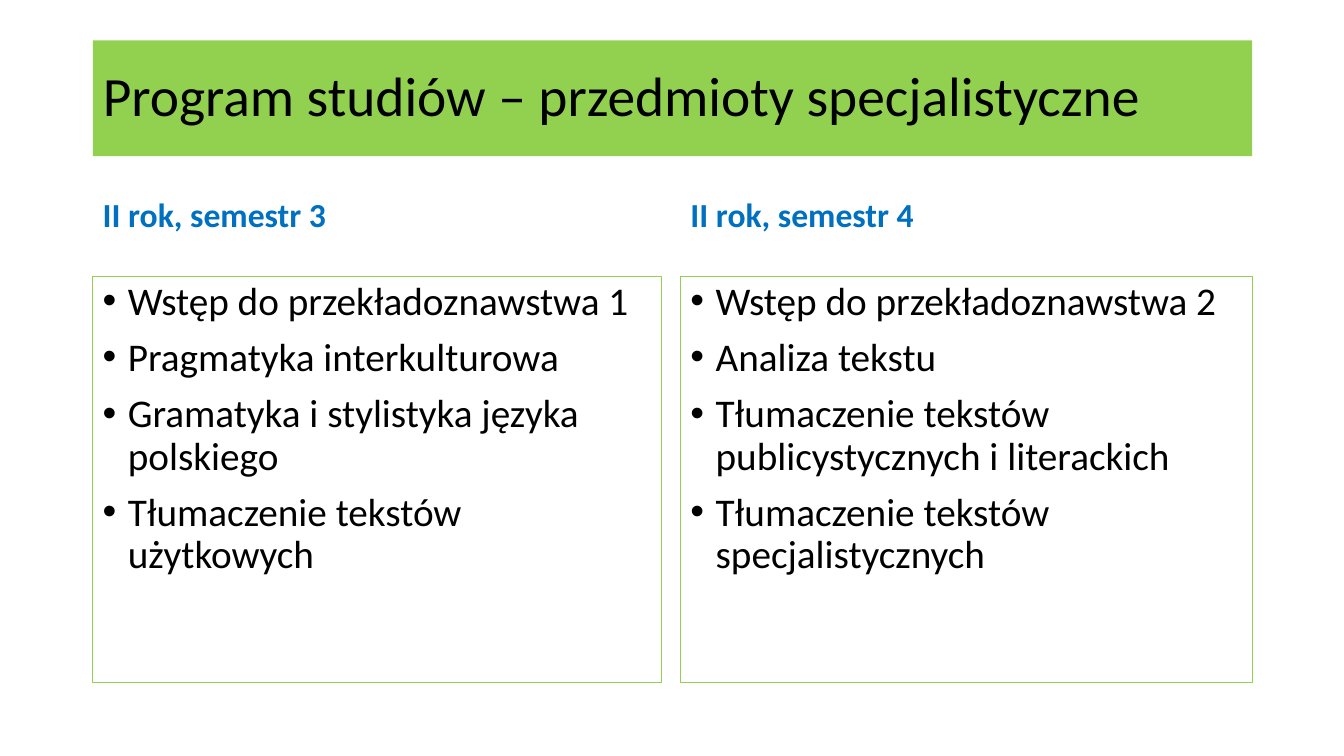
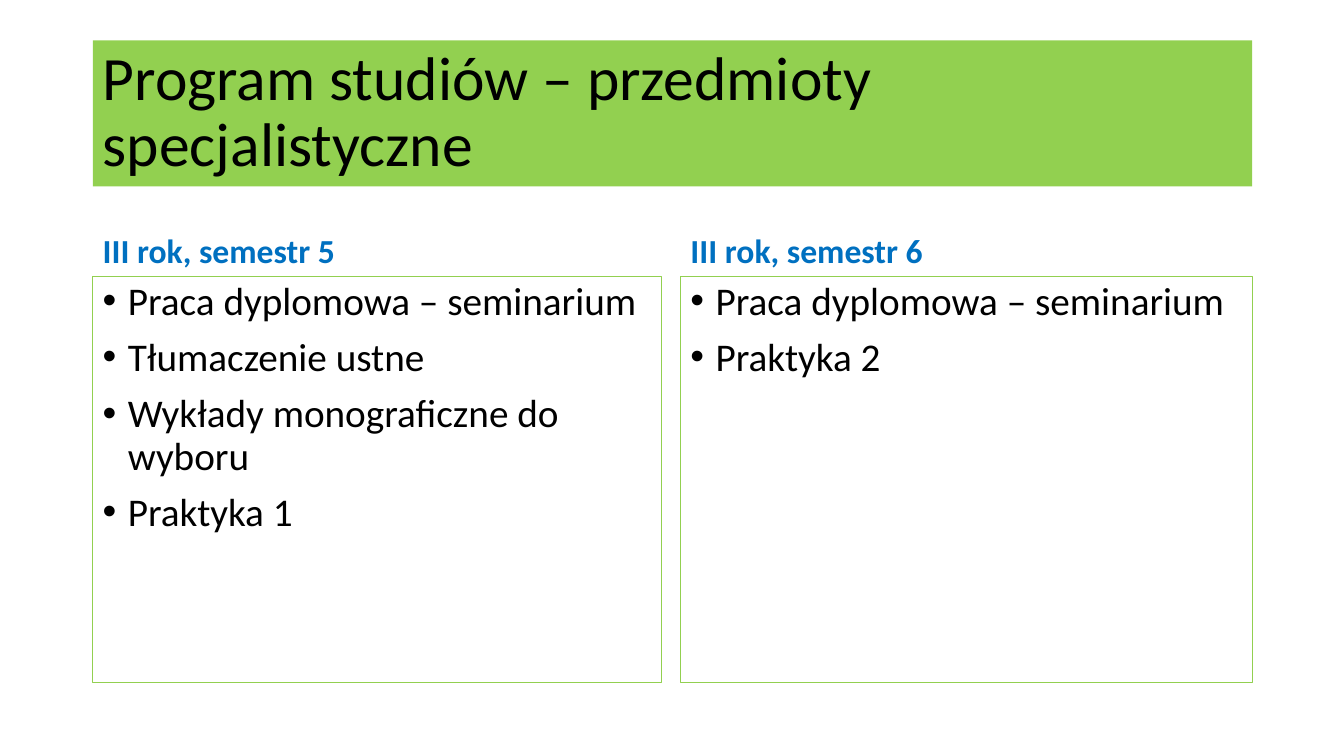
from dataclasses import dataclass

from lxml.etree import SubElement
from pptx import Presentation
from pptx.dml.color import RGBColor
from pptx.enum.shapes import MSO_SHAPE as Shape
from pptx.enum.text import MSO_ANCHOR as Anchor, MSO_AUTO_SIZE as AutoSize, PP_ALIGN as Align
from pptx.oxml.ns import qn
from pptx.util import Inches, Pt

# Shared style
GREEN = RGBColor(0x92, 0xD0, 0x50)
BLUE = RGBColor(0x00, 0x70, 0xC0)
BLACK = RGBColor(0x00, 0x00, 0x00)
FONT = "Calibri"
TITLE = "Program studiów – przedmioty specjalistyczne"

# Grid in inches: two columns with a gutter, one row of headings, one of lists
SLIDE_WIDTH, SLIDE_HEIGHT = 13.33, 7.5
MARGIN, GUTTER = 0.92, 0.19
COLUMN_WIDTHS = (5.64, 5.67)
CONTENT_WIDTH = sum(COLUMN_WIDTHS) + GUTTER
COLUMN_LEFTS = (MARGIN, MARGIN + COLUMN_WIDTHS[0] + GUTTER)
TITLE_TOP, HEADING_TOP, LIST_TOP, LIST_HEIGHT = 0.4, 1.84, 2.74, 4.03
INDENT = 0.25


@dataclass(frozen=True)
class Semester:
    heading: str
    subjects: tuple[str, ...]


@dataclass(frozen=True)
class YearPage:
    title_height: float
    title_size: float
    heading_height: float
    semesters: tuple[Semester, Semester]


PAGES = (
    YearPage(1.15, 39.6, 0.54, (
        Semester("II rok, semestr 3", (
            "Wstęp do przekładoznawstwa 1",
            "Pragmatyka interkulturowa",
            "Gramatyka i stylistyka języka polskiego",
            "Tłumaczenie tekstów użytkowych",
        )),
        Semester("II rok, semestr 4", (
            "Wstęp do przekładoznawstwa 2",
            "Analiza tekstu",
            "Tłumaczenie tekstów publicystycznych i literackich",
            "Tłumaczenie tekstów specjalistycznych",
        )),
    )),
    YearPage(1.45, 44, 0.9, (
        Semester("III rok, semestr 5", (
            "Praca dyplomowa – seminarium",
            "Tłumaczenie ustne",
            "Wykłady monograficzne do wyboru",
            "Praktyka 1",
        )),
        Semester("III rok, semestr 6", (
            "Praca dyplomowa – seminarium",
            "Praktyka 2",
        )),
    )),
)


def add_bullet(para) -> None:
    """Give a paragraph a round bullet with a hanging indent."""
    properties = para._p.get_or_add_pPr()
    properties.set("marL", str(Inches(INDENT)))
    properties.set("indent", str(-Inches(INDENT)))
    SubElement(properties, qn("a:buFont")).set("typeface", "Arial")
    SubElement(properties, qn("a:buChar")).set("char", "•")


def write(box, *lines: str, size: float, color: RGBColor = BLACK, bold: bool = False,
          anchor: Anchor = Anchor.TOP, before: float = 10, bullets: bool = False) -> None:
    """Fill a shape with one paragraph per line."""
    frame = box.text_frame
    frame.word_wrap = True
    frame.auto_size = AutoSize.NONE
    frame.vertical_anchor = anchor
    for index, line in enumerate(lines):
        para = frame.add_paragraph() if index else frame.paragraphs[0]
        para.alignment = Align.LEFT
        para.line_spacing = 0.9
        para.space_before = Pt(before)
        if bullets:
            add_bullet(para)
        span = para.add_run()
        span.text = line
        span.font.name = FONT
        span.font.size = Pt(size)
        span.font.bold = bold
        span.font.color.rgb = color


def draw_title(page, content: YearPage) -> None:
    """Turn the title placeholder into the green band."""
    title = page.shapes.title
    title.left, title.top = Inches(MARGIN), Inches(TITLE_TOP)
    title.width, title.height = Inches(CONTENT_WIDTH), Inches(content.title_height)
    title.fill.solid()
    title.fill.fore_color.rgb = GREEN
    write(title, TITLE, size=content.title_size, anchor=Anchor.MIDDLE, before=0)


def draw_semester(page, semester: Semester, left: float, width: float,
                  heading_height: float) -> None:
    """Draw a heading above an outlined list of subjects."""
    heading = page.shapes.add_textbox(
        Inches(left), Inches(HEADING_TOP), Inches(width), Inches(heading_height))
    write(heading, semester.heading, size=24, color=BLUE, bold=True, anchor=Anchor.BOTTOM)

    panel = page.shapes.add_shape(
        Shape.RECTANGLE, Inches(left), Inches(LIST_TOP), Inches(width), Inches(LIST_HEIGHT))
    panel.shadow.inherit = False
    panel.fill.background()
    panel.line.color.rgb = GREEN
    panel.line.width = Pt(0.75)
    write(panel, *semester.subjects, size=28, bullets=True)


def main() -> None:
    deck = Presentation()
    deck.slide_width, deck.slide_height = Inches(SLIDE_WIDTH), Inches(SLIDE_HEIGHT)
    title_only = deck.slide_layouts.get_by_name("Title Only")
    for content in PAGES:
        page = deck.slides.add_slide(title_only)
        draw_title(page, content)
        for semester, left, width in zip(content.semesters, COLUMN_LEFTS, COLUMN_WIDTHS):
            draw_semester(page, semester, left, width, content.heading_height)
    deck.save("out.pptx")


if __name__ == "__main__":
    main()
